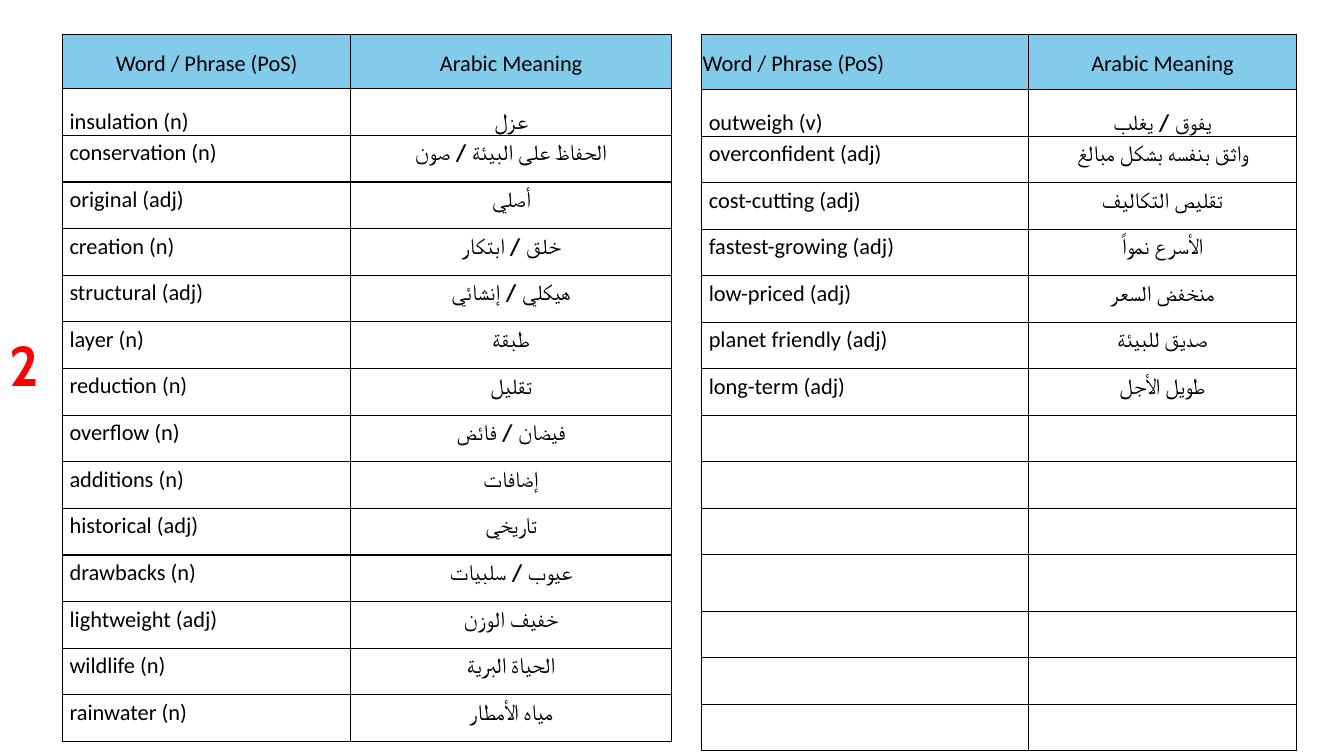
import pptx
import pptx.util
import pptx.dml.color
import pptx.enum.text
import pptx.oxml
import pptx.oxml.ns
from lxml import etree

Inches, Pt = pptx.util.Inches, pptx.util.Pt
ALIGN, ANCHOR = pptx.enum.text.PP_ALIGN, pptx.enum.text.MSO_ANCHOR
COLORS = {"header": "83CBEB", "text": "000000", "border": "000000", "number": "FF0000"}
TEXT_SIZE = 16

# Paragraph formats
HEADER = {"line_spacing": 1.15, "space_after": Pt(8)}
WORD = {"line_spacing": 1.15, "space_before": Pt(1.8), "space_after": Pt(1.8),
        "alignment": ALIGN.LEFT}
MEANING = HEADER | {"alignment": ALIGN.CENTER}

# Vocabulary, with the place and the row heights of each table
HEADINGS = ("Word / Phrase (PoS)", "Arabic Meaning")
ROW_COUNT = 15
VOCABULARIES = [
    {"left": 0.62, "height": 7.02, "columns": (2.86, 3.18), "special_rows": {0: 0.54},
     "header_align": ALIGN.CENTER, "header_insets": (0.07, 0),
     "entries": [
         ("insulation (n)", "عزل"),
         ("conservation (n)", "الحفاظ على البيئة / صون"),
         ("original (adj)", "أصلي"),
         ("creation (n)", "خلق / ابتكار"),
         ("structural (adj)", "هيكلي / إنشائي"),
         ("layer (n)", "طبقة"),
         ("reduction (n)", "تقليل"),
         ("overflow (n)", "فيضان / فائض"),
         ("additions (n)", "إضافات"),
         ("historical (adj)", "تاريخي"),
         ("drawbacks (n)", "عيوب / سلبيات"),
         ("lightweight (adj)", "خفيف الوزن"),
         ("wildlife (n)", "الحياة البرية"),
         ("rainwater (n)", "مياه الأمطار"),
     ]},
    {"left": 6.96, "height": 7.11, "columns": (3.24, 2.66),
     "special_rows": {0: 0.55, 11: 0.56},
     "header_align": ALIGN.LEFT, "header_insets": (0.01, 0.01),
     "entries": [
         ("outweigh (v)", "يفوق / يغلب"),
         ("overconfident (adj)", "واثق بنفسه بشكل مبالغ"),
         ("cost-cutting (adj)", "تقليص التكاليف"),
         ("fastest-growing (adj)", "الأسرع نمواً"),
         ("low-priced (adj)", "منخفض السعر"),
         ("planet friendly (adj)", "صديق للبيئة"),
         ("long-term (adj)", "طويل الأجل"),
     ]},
]


def write(paragraph, text, font, size, color, bold=False):
    run = paragraph.add_run()
    run.text = text
    for name, value in {"name": font, "size": Pt(size), "bold": bold}.items():
        setattr(run.font, name, value)
    run.font.color.rgb = pptx.dml.color.RGBColor.from_string(color)
    # Arabic letters take the complex-script typeface
    if font == "Cabin":
        script = etree.SubElement(run.font._element, pptx.oxml.ns.qn("a:cs"))
        script.set("typeface", font)


def style_cell(cell, fill, anchor, insets):
    side, edge = (Inches(inset) for inset in insets)
    layout = {"vertical_anchor": anchor, "margin_left": side, "margin_right": side,
              "margin_top": edge, "margin_bottom": edge}
    for name, value in layout.items():
        setattr(cell, name, value)
    if fill:
        cell.fill.solid()
        cell.fill.fore_color.rgb = pptx.dml.color.RGBColor.from_string(fill)
    else:
        cell.fill.background()
    properties = cell._tc.get_or_add_tcPr()
    for position, border in enumerate(("lnL", "lnR", "lnT", "lnB")):
        properties.insert(position, pptx.oxml.parse_xml(
            f'<a:{border} {pptx.oxml.ns.nsdecls("a")} w="{Pt(1)}"><a:solidFill>'
            f'<a:srgbClr val="{COLORS["border"]}"/></a:solidFill></a:{border}>'))


presentation = pptx.Presentation()
presentation.slide_width, presentation.slide_height = Inches(13.33), Inches(7.5)
slide = presentation.slides.add_slide(presentation.slide_layouts[6])

# Vocabulary tables
for vocabulary in VOCABULARIES:
    columns, special_rows = vocabulary["columns"], vocabulary["special_rows"]
    table = slide.shapes.add_table(
        ROW_COUNT, len(columns), Inches(vocabulary["left"]), Inches(0.34),
        Inches(sum(columns)), Inches(vocabulary["height"])).table
    table.first_row = table.horz_banding = False
    for column, width in zip(table.columns, columns):
        column.width = Inches(width)
    regular = ((vocabulary["height"] - sum(special_rows.values()))
               / (ROW_COUNT - len(special_rows)))
    for index, row in enumerate(table.rows):
        row.height = Inches(special_rows.get(index, regular))

    lines = [HEADINGS] + vocabulary["entries"]
    for index, row in enumerate(table.rows):
        for side, cell in enumerate(row.cells):
            is_header = index == 0
            anchor = {0: ANCHOR.MIDDLE, 1: ANCHOR.BOTTOM}.get(index, ANCHOR.TOP)
            style_cell(cell, COLORS["header"] if is_header else None, anchor,
                       vocabulary["header_insets"] if is_header else (0.07, 0))
            paragraph = cell.text_frame.paragraphs[0]
            if index >= len(lines):
                paragraph.font.size = Pt(TEXT_SIZE)
                continue
            style = MEANING if side else WORD
            if is_header and side == 0:
                style = HEADER | {"alignment": vocabulary["header_align"]}
            for name, value in style.items():
                setattr(paragraph, name, value)
            font = "Cabin" if side and not is_header else "Calibri"
            write(paragraph, lines[index][side], font, TEXT_SIZE, COLORS["text"])

# Page number
page_number = slide.shapes.add_textbox(Inches(0), Inches(3.23), Inches(0.47), Inches(0.77))
page_number.text_frame.word_wrap = True
page_number.text_frame.auto_size = pptx.enum.text.MSO_AUTO_SIZE.SHAPE_TO_FIT_TEXT
write(page_number.text_frame.paragraphs[0], "2", "Cabin", 40, COLORS["number"], bold=True)

presentation.save("out.pptx")
